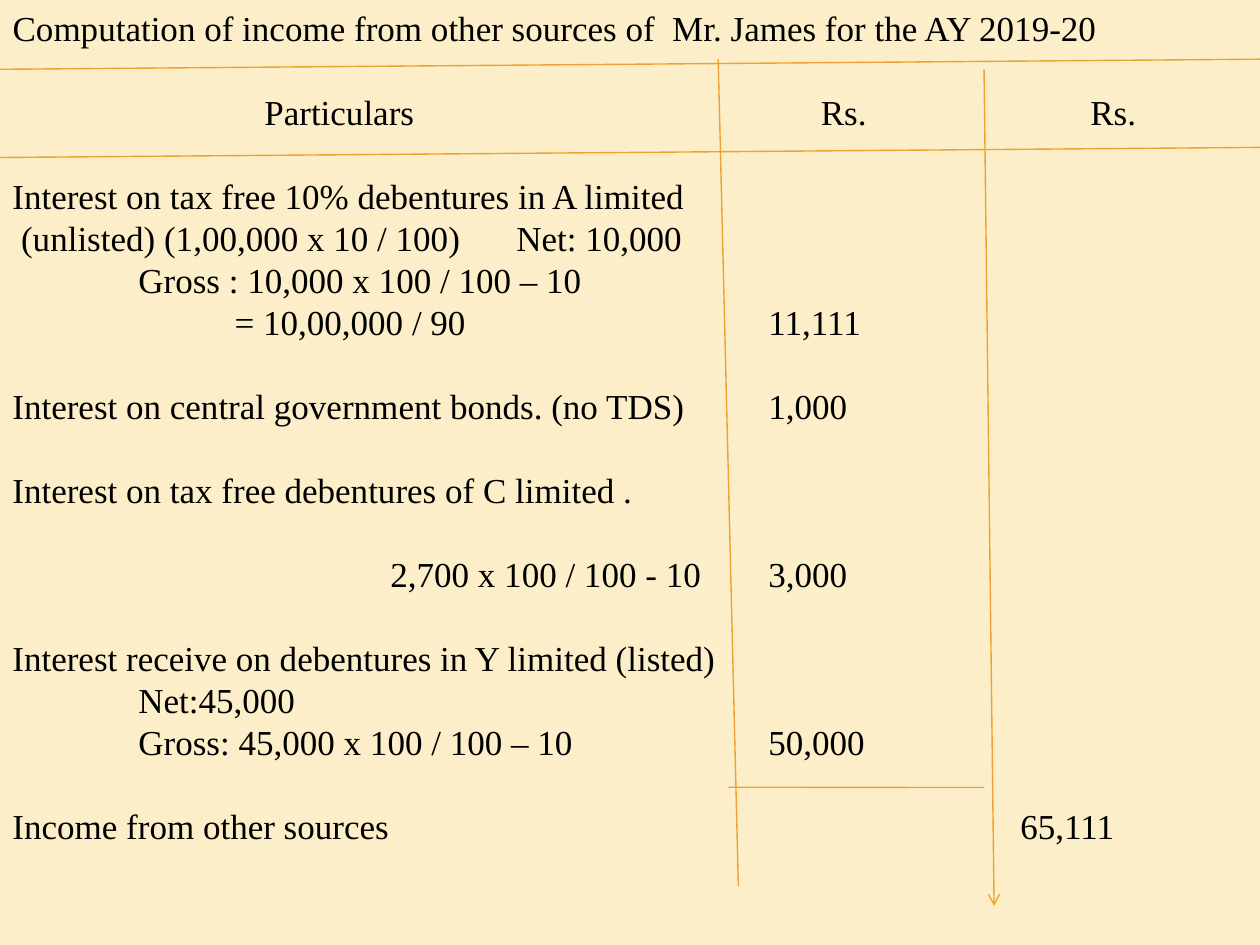
from lxml.etree import SubElement
from pptx import Presentation
from pptx.dml.color import RGBColor
from pptx.enum.shapes import MSO_CONNECTOR
from pptx.enum.text import MSO_ANCHOR, MSO_AUTO_SIZE, PP_ALIGN
from pptx.oxml.ns import qn
from pptx.util import Pt

CREAM = RGBColor(0xFB, 0xEE, 0xC9)
ORANGE = RGBColor(0xF0, 0xA2, 0x2E)
BLACK = RGBColor(0, 0, 0)
FONT = "Times New Roman"
SIZE = 20
PITCH = 24
WIDTH, HEIGHT = 720, 540
STEP, AMOUNT, TOTAL = 72, 432, 576

TITLE = "Computation of income from other sources of  Mr. James for the AY 2019-20"
ROWS = [
    (0, [(2 * STEP, "Particulars"), (462, "Rs."), (616, "Rs.")]),
    (1, [(0, "Interest on tax free 10% debentures in A limited")]),
    (0, [(5, "(unlisted) (1,00,000 x 10 / 100)"), (4 * STEP, "Net: 10,000")]),
    (0, [(STEP, "Gross : 10,000 x 100 / 100 – 10")]),
    (0, [(127, "= 10,00,000 / 90"), (AMOUNT, "11,111")]),
    (1, [(0, "Interest on central government bonds. (no TDS)"), (AMOUNT, "1,000")]),
    (1, [(0, "Interest on tax free debentures of C limited .")]),
    (1, [(3 * STEP, "2,700 x 100 / 100 - 10"), (AMOUNT, "3,000")]),
    (1, [(0, "Interest receive on debentures in Y limited (listed)")]),
    (0, [(STEP, "Net:45,000")]),
    (0, [(STEP, "Gross: 45,000 x 100 / 100 – 10"), (AMOUNT, "50,000")]),
    (1, [(0, "Income from other sources"), (TOTAL, "65,111")]),
]


def place(sp, x, y, w, h):
    sp.left, sp.top, sp.width, sp.height = Pt(x), Pt(y), Pt(w), Pt(h)
    tf = sp.text_frame
    tf.auto_size = MSO_AUTO_SIZE.NONE
    tf.word_wrap = True
    tf.vertical_anchor = MSO_ANCHOR.TOP
    tf.margin_left = tf.margin_right = Pt(7.2)
    tf.margin_top = tf.margin_bottom = Pt(3.6)
    return tf


def add_line_of_text(p, text, before=0):
    p.alignment = PP_ALIGN.LEFT
    p.line_spacing = Pt(PITCH)
    p.space_before = Pt(before)
    p.space_after = Pt(0)
    r = p.add_run()
    r.text = text
    r.font.name = FONT
    r.font.size = Pt(SIZE)
    r.font.color.rgb = BLACK


def add_title(s, x, y, w, h):
    tf = place(s.shapes.title, x, y, w, h)
    add_line_of_text(tf.paragraphs[0], TITLE)


def add_statement(s, x, y, w, h):
    tf = place(s.shapes.add_textbox(0, 0, 0, 0), x, y, w, h)
    for i, (gap, cells) in enumerate(ROWS):
        p = tf.paragraphs[0] if i == 0 else tf.add_paragraph()
        stops = [pos for pos, _ in cells if pos]
        if stops:
            tabs = SubElement(p._p.get_or_add_pPr(), qn("a:tabLst"))
            for pos in stops:
                SubElement(tabs, qn("a:tab"), pos=str(int(Pt(pos))), algn="l")
        text = "\t".join(label for _, label in cells)
        if cells[0][0]:
            text = "\t" + text
        add_line_of_text(p, text, gap * PITCH)


def add_rule(s, x1, y1, x2, y2, arrow=False):
    line = s.shapes.add_connector(
        MSO_CONNECTOR.STRAIGHT, Pt(x1), Pt(y1), Pt(x2), Pt(y2))
    line.line.color.rgb = ORANGE
    line.line.width = Pt(0.79)
    if arrow:
        SubElement(line.line._get_or_add_ln(), qn("a:tailEnd"), type="arrow")
    SubElement(line._element.spPr, qn("a:effectLst"))


def add_ruling(s, x, y, w):
    for top in (y, y + 50.4):
        add_rule(s, x, top + 5.76, x + w, top)
    add_rule(s, x + 410.4, y, x + 421.92, y + 472.32)
    add_rule(s, x + 562.32, y + 5.76, x + 568.08, y + 483.84, arrow=True)
    add_rule(s, x + 416.16, y + 416, x + 562.32, y + 416.2)


def main():
    prs = Presentation()
    prs.slide_width, prs.slide_height = Pt(WIDTH), Pt(HEIGHT)
    s = prs.slides.add_slide(prs.slide_layouts[5])
    s.background.fill.solid()
    s.background.fill.fore_color.rgb = CREAM
    add_title(s, 0, 0, WIDTH, 32)
    add_statement(s, 0, 2 * PITCH, WIDTH, HEIGHT - 2 * PITCH)
    add_ruling(s, 0, 33.84, WIDTH)
    prs.save("out.pptx")


if __name__ == "__main__":
    main()
